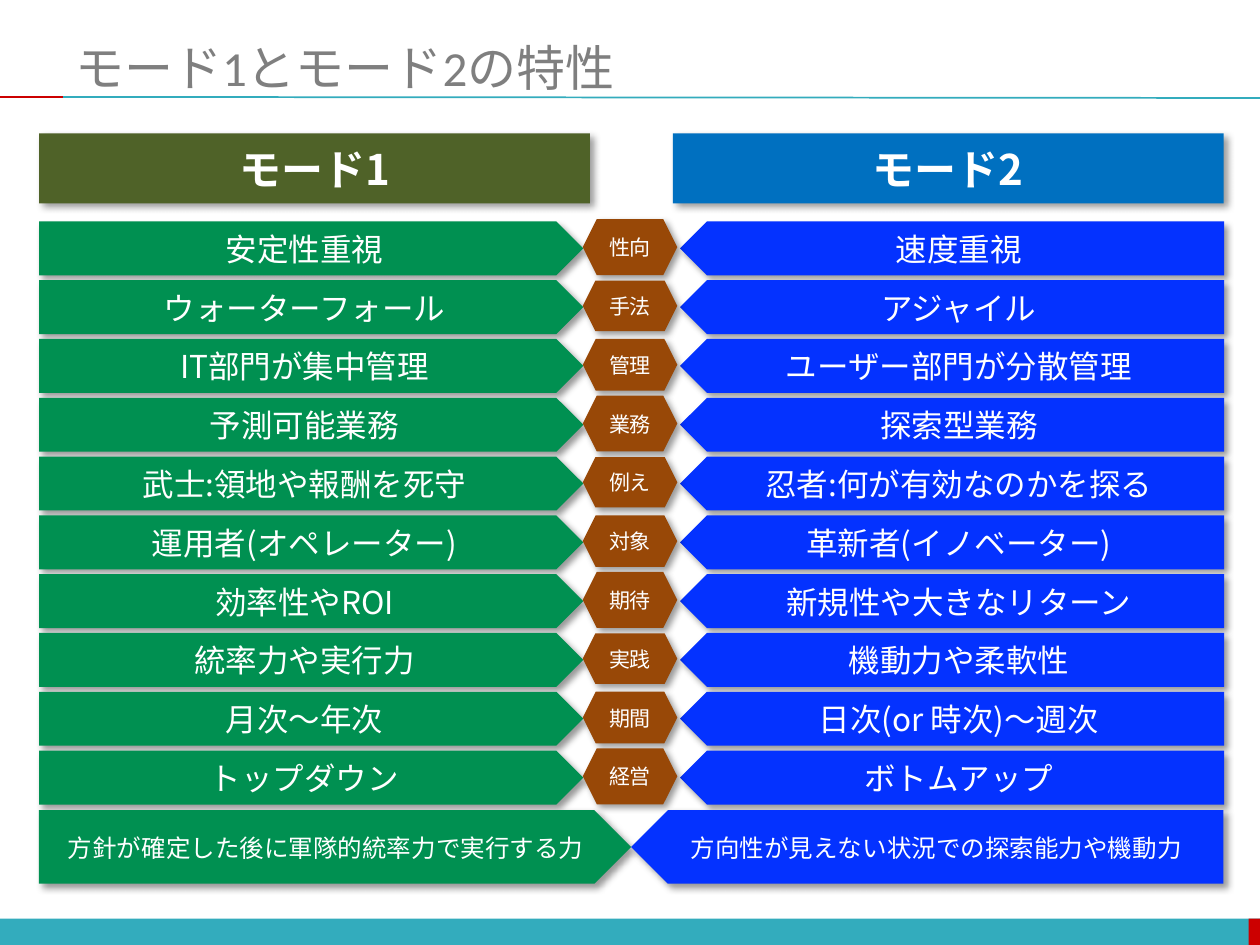
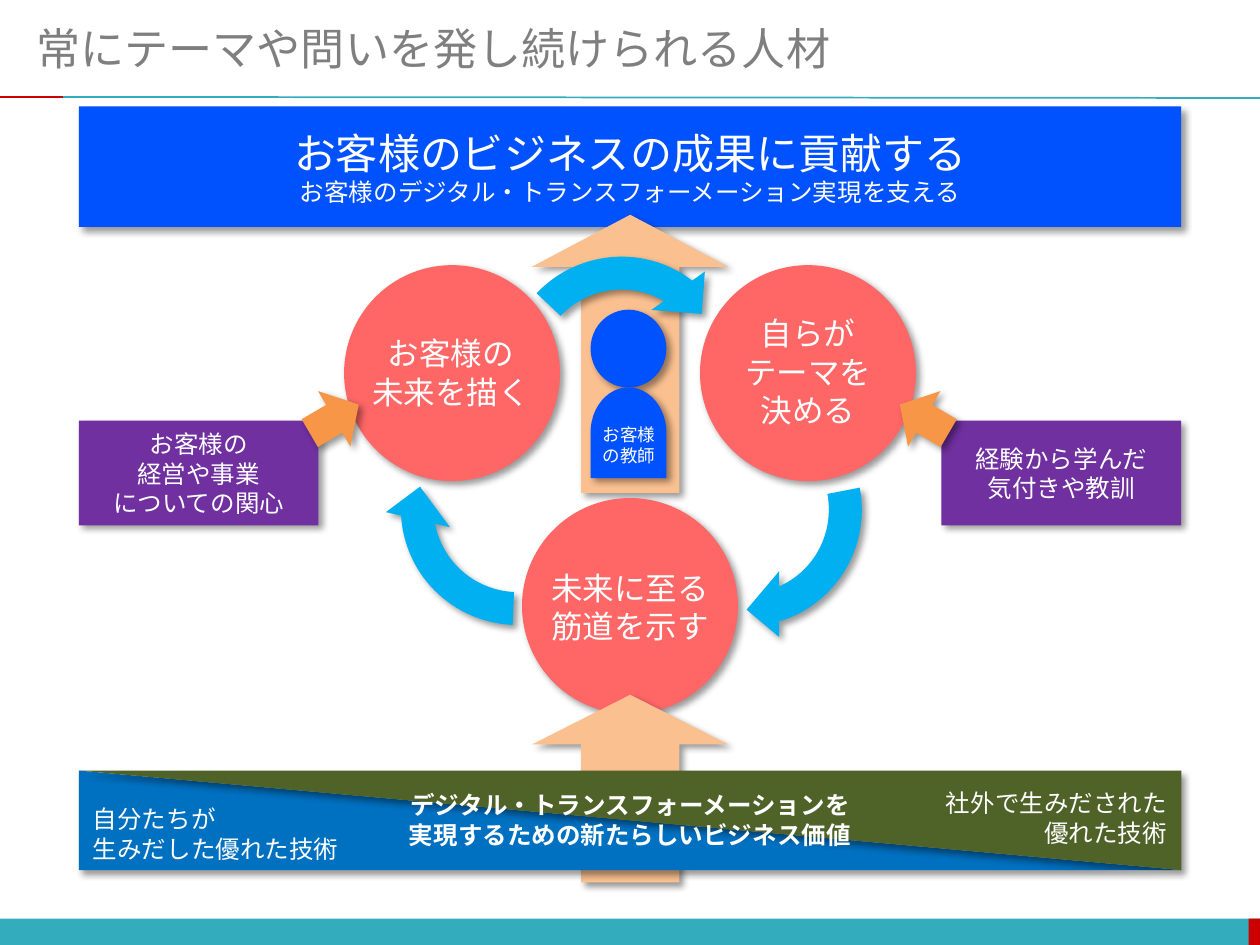
from lxml import etree
from pptx import Presentation
from pptx.dml.color import RGBColor
from pptx.enum.shapes import MSO_CONNECTOR, MSO_SHAPE
from pptx.enum.text import MSO_ANCHOR, MSO_AUTO_SIZE, PP_ALIGN
from pptx.oxml.ns import qn
from pptx.util import Pt

RECT, OVAL = MSO_SHAPE.RECTANGLE, MSO_SHAPE.OVAL
PENTAGON, HEXAGON = MSO_SHAPE.PENTAGON, MSO_SHAPE.HEXAGON
UP_ARROW, RIGHT_ARROW = MSO_SHAPE.UP_ARROW, MSO_SHAPE.RIGHT_ARROW
CIRCULAR_ARROW = MSO_SHAPE.CIRCULAR_ARROW
TRIANGLE, DELAY = MSO_SHAPE.RIGHT_TRIANGLE, MSO_SHAPE.FLOWCHART_DELAY
STRAIGHT = MSO_CONNECTOR.STRAIGHT
LEFT, CENTER, RIGHT = PP_ALIGN.LEFT, PP_ALIGN.CENTER, PP_ALIGN.RIGHT
TOP, MIDDLE = MSO_ANCHOR.TOP, MSO_ANCHOR.MIDDLE
FIT, NO_FIT = MSO_AUTO_SIZE.SHAPE_TO_FIT_TEXT, MSO_AUTO_SIZE.NONE

COLORS = {
    "teal": "33ACBD", "red": "CC0000", "gray": "7F7F7F", "white": "FFFFFF",
    "olive": "4F6228", "sea": "0070C0", "green": "009051", "blue": "0432FF",
    "brown": "984807", "royal": "0052FF", "peach": "FAC090", "coral": "FF6666",
    "sky": "00B0F0", "purple": "7030A0", "orange": "F79646", "black": "000000",
}
BODY_FONT, TITLE_FONT = "Noto Sans CJK JP", "Calibri"
LINE_HEIGHT = 1.22


def color(name):
    return RGBColor.from_string(COLORS[name])


def write(frame, text, size=18, tint="white", font=BODY_FONT, bold=False,
          align=CENTER, anchor=MIDDLE):
    """Write one paragraph for each line of text."""
    frame.vertical_anchor = anchor
    for index, line in enumerate(text.split("\n")):
        para = frame.add_paragraph() if index else frame.paragraphs[0]
        para.alignment = align
        para.line_spacing = Pt(round(size * LINE_HEIGHT, 1))
        span = para.add_run()
        span.text = line
        span.font.size = Pt(size)
        span.font.bold = bold
        span.font.color.rgb = color(tint)
        span.font.name = font
        east_asian = etree.SubElement(span.font._element, qn("a:ea"))
        east_asian.set("typeface", BODY_FONT)


class Painter:
    """Holds the deck, its style and the current slide."""

    def __init__(self):
        self.deck = Presentation()
        self.deck.slide_width, self.deck.slide_height = Pt(720), Pt(540)
        self.page = None

    def start(self, title, left, top, size):
        self.page = self.deck.slides.add_slide(self.deck.slide_layouts[6])
        self.shape(RECT, 0, 524.9, 720, 15.8, "teal", shadow=False)
        self.shape(RECT, 713.5, 524.9, 7.2, 15.8, "red", shadow=False)
        self.line(36, 55.4, 720, 56, "teal")
        self.line(0, 55.4, 36, 55.4, "red")
        self.label(title, left, top, 720 - left, 33, fit=False, size=size,
                   tint="gray", font=TITLE_FONT, align=LEFT, anchor=MIDDLE)

    def shape(self, kind, left, top, width, height, fill, text="", turn=0,
              flip=False, adjust=(), shadow=True, **style):
        box = self.page.shapes.add_shape(
            kind, Pt(left), Pt(top), Pt(width), Pt(height))
        box.fill.solid()
        box.fill.fore_color.rgb = color(fill)
        box.line.fill.background()
        box.rotation = turn
        for index, value in enumerate(adjust):
            box.adjustments[index] = value
        if flip:
            box._element.spPr.xfrm.set("flipH", "1")
        box.shadow.inherit = False
        if shadow:
            self.cast_shadow(box)
        if text:
            write(box.text_frame, text, **style)

    def cast_shadow(self, box):
        effects = box._element.spPr.find(qn("a:effectLst"))
        outer = etree.SubElement(
            effects, qn("a:outerShdw"), blurRad=str(Pt(4)), dist=str(Pt(3)),
            dir=str(45 * 60000), algn="tl", rotWithShape="0")
        tone = etree.SubElement(outer, qn("a:srgbClr"), val=COLORS["black"])
        etree.SubElement(tone, qn("a:alpha"), val="40000")

    def line(self, x1, y1, x2, y2, tint):
        rule = self.page.shapes.add_connector(
            STRAIGHT, Pt(x1), Pt(y1), Pt(x2), Pt(y2))
        rule.line.color.rgb = color(tint)
        rule.line.width = Pt(1)
        etree.SubElement(rule._element.spPr, qn("a:effectLst"))

    def label(self, text, left, top, width, height, fit=True, anchor=TOP,
              **style):
        box = self.page.shapes.add_textbox(
            Pt(left), Pt(top), Pt(width), Pt(height))
        box.text_frame.word_wrap = not fit
        box.text_frame.auto_size = FIT if fit else NO_FIT
        write(box.text_frame, text, anchor=anchor, **style)


def draw_modes(painter):
    painter.start("モード1とモード2の特性", 36, 21.6, 28)

    # Column headings
    for text, left, fill in (("モード1", 22.3, "olive"),
                             ("モード2", 384.5, "sea")):
        painter.shape(RECT, left, 76.2, 314.8, 40, fill, text,
                      size=24, bold=True)

    # Paired traits with their topic between them
    rows = (
        ("安定性重視", "性向", "速度重視"),
        ("ウォーターフォール", "手法", "アジャイル"),
        ("IT部門が集中管理", "管理", "ユーザー部門が分散管理"),
        ("予測可能業務", "業務", "探索型業務"),
        ("武士:領地や報酬を死守", "例え", "忍者:何が有効なのかを探る"),
        ("運用者(オペレーター)", "対象", "革新者(イノベーター)"),
        ("効率性やROI", "期待", "新規性や大きなリターン"),
        ("統率力や実行力", "実践", "機動力や柔軟性"),
        ("月次〜年次", "期間", "日次(or 時次)〜週次"),
        ("トップダウン", "経営", "ボトムアップ"),
    )
    row_height, pitch = 30.8, 33.6
    for index, (first, topic, second) in enumerate(rows):
        top = 126.5 + index * pitch
        painter.shape(PENTAGON, 22.3, top, 311, row_height, "green", first)
        painter.shape(PENTAGON, 388.6, top, 311, row_height, "blue", second,
                      flip=True)
        height = (32, 28.8, 29.5)[index % 3]
        painter.shape(HEXAGON, 333, top + (row_height - height) / 2 - 0.7,
                      54, height, "brown", topic, size=12)

    # Summary
    painter.shape(PENTAGON, 22.3, 463, 338.4, 42, "green",
                  "方針が確定した後に軍隊的統率力で実行する力", size=14)
    painter.shape(PENTAGON, 360.7, 463, 338.4, 42, "blue",
                  "方向性が見えない状況での探索能力や機動力", size=14, flip=True)


def draw_talent(painter):
    painter.start("常にテーマや問いを発し続けられる人材", 13.7, 10.8, 25.2)
    edge, span_width = 45, 630

    # Goal banner
    painter.shape(RECT, edge, 60.8, span_width, 68.8, "royal")
    painter.label("お客様のビジネスの成果に貢献する", edge, 69, span_width, 36,
                  fit=False, size=24)
    painter.label("お客様のデジタル・トランスフォーメーション実現を支える",
                  edge, 97.5, span_width, 24, fit=False, size=14)
    painter.shape(UP_ARROW, 304, 122.7, 112.3, 159, "peach",
                  adjust=(0.5, 0.265))

    # Cycle of three tasks
    for left, top in ((196.6, 151.5), (400, 151.5), (298.3, 284.6)):
        painter.shape(OVAL, left, top, 123.4, 123.4, "coral")
    for left, top, turn in ((278.6, 137.5, 324.3), (350.6, 216, 90),
                            (219.6, 216, 193.3)):
        painter.shape(CIRCULAR_ARROW, left, top, 152, 150.5, "sky", turn=turn,
                      adjust=(0.125, 11.423, 204.577, 155.417, 0.125))
    painter.label("未来に至る\n筋道を示す", 307.4, 321, 105, 51)
    painter.label("自らが\nテーマを\n決める", 418.3, 175.7, 87, 73)
    painter.label("お客様の\n未来を描く", 205.2, 187.2, 105, 51)

    # Inputs from both sides
    for text, left in (("お客様の\n経営や事業\nについての関心", edge),
                       ("経験から学んだ\n気付きや教訓", 538)):
        painter.shape(RECT, left, 240.4, 137, 59.8, "purple", text, size=14)

    # Teacher figure
    painter.shape(OVAL, 337.5, 177, 43.3, 44.5, "royal")
    painter.shape(DELAY, 333.2, 225.6, 51.9, 43.3, "royal", turn=270)
    painter.shape(RIGHT_ARROW, 174.8, 221, 32.4, 36.7, "orange", turn=329.7)

    # Technology base
    painter.shape(UP_ARROW, 304, 397, 112.3, 107.3, "peach",
                  adjust=(0.5, 0.265))
    painter.shape(TRIANGLE, edge, 440.3, span_width, 56.9, "sea")
    painter.shape(TRIANGLE, edge, 440.3, span_width, 56.9, "olive", turn=180)
    painter.label("自分たちが\n生みだした優れた技術", 46, 455.8, 156, 41,
                  size=14, align=LEFT)
    painter.label("社外で生みだされた\n優れた技術", 532, 446.4, 142, 41,
                  size=14, align=RIGHT)
    painter.label("デジタル・トランスフォーメーションを\n"
                  "実現するための新たらしいビジネス価値",
                  225.4, 447.8, 269.3, 41, size=14, bold=True)

    painter.shape(RIGHT_ARROW, 512, 221, 32.4, 36.7, "orange", turn=30.3,
                  flip=True)
    painter.label("お客様\nの教師", 337, 238.3, 44.6, 31.7, size=10)


def main():
    painter = Painter()
    draw_modes(painter)
    draw_talent(painter)
    painter.deck.save("out.pptx")


if __name__ == "__main__":
    main()
